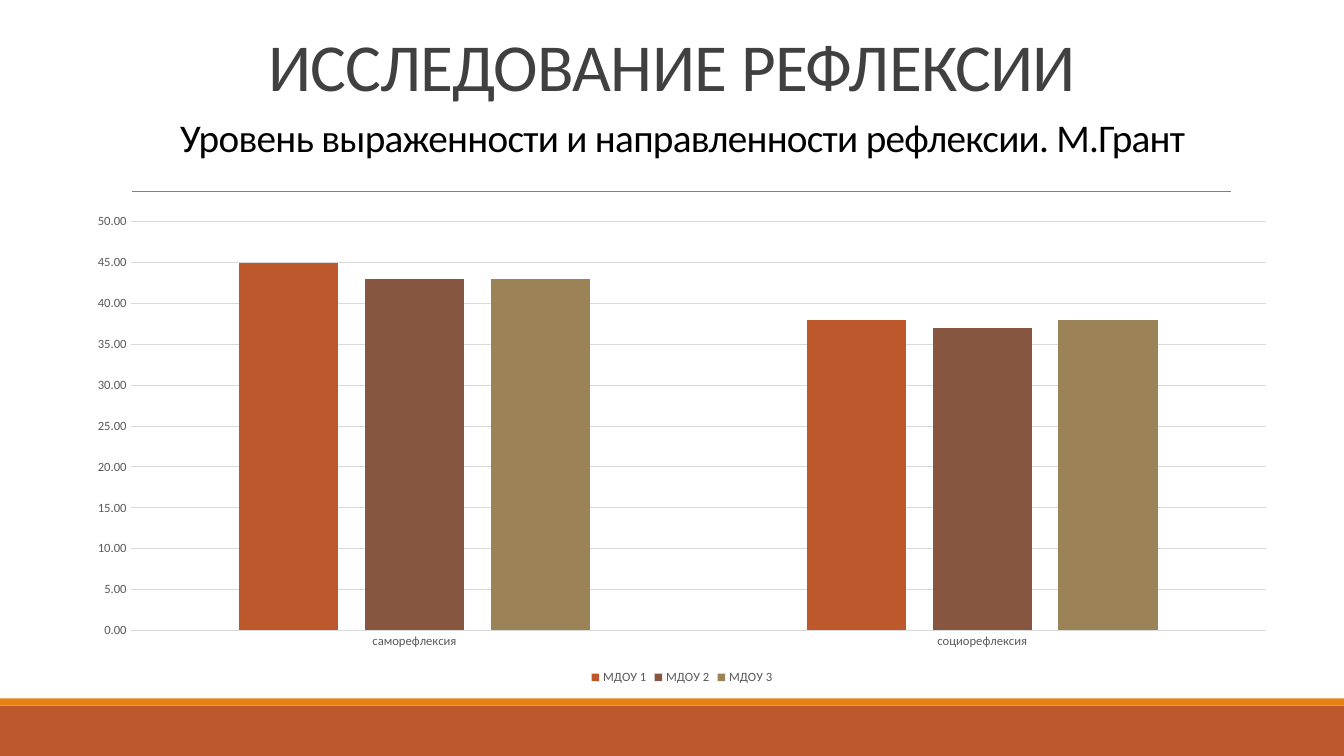
from dataclasses import dataclass

from pptx import Presentation
from pptx.chart.data import CategoryChartData
from pptx.dml.color import RGBColor
from pptx.enum.chart import XL_CHART_TYPE, XL_LEGEND_POSITION, XL_TICK_MARK
from pptx.enum.shapes import MSO_CONNECTOR, MSO_SHAPE
from pptx.enum.text import MSO_ANCHOR, MSO_AUTO_SIZE, PP_ALIGN
from pptx.oxml.ns import qn
from pptx.util import Emu, Pt

COLUMNS = XL_CHART_TYPE.COLUMN_CLUSTERED
LEGEND_BOTTOM = XL_LEGEND_POSITION.BOTTOM
NO_TICK = XL_TICK_MARK.NONE
STRAIGHT = MSO_CONNECTOR.STRAIGHT
RECTANGLE = MSO_SHAPE.RECTANGLE
BOTTOM = MSO_ANCHOR.BOTTOM
NO_AUTOFIT = MSO_AUTO_SIZE.NONE
CENTER = PP_ALIGN.CENTER

EMU_PER_PX = 9525
SLIDE_WIDTH, SLIDE_HEIGHT = 1280, 720


@dataclass(frozen=True)
class Theme:
    font: str = "Calibri"
    heading_size: int = 48
    subtitle_size: int = 28
    chart_size: int = 10
    label_size: int = 9
    heading: str = "404040"
    ink: str = "000000"
    label: str = "595959"
    grid: str = "D9D9D9"
    rule: str = "808080"
    rust: str = "BD582C"
    orange: str = "E48312"
    brown: str = "865640"
    olive: str = "9B8357"


@dataclass(frozen=True)
class Area:
    left: int
    top: int
    width: int
    height: int

    def emu(self) -> tuple[Emu, ...]:
        return tuple(px(n) for n in (self.left, self.top, self.width, self.height))


@dataclass(frozen=True)
class Band:
    area: Area
    color: str


@dataclass(frozen=True)
class Heading:
    text: str
    area: Area
    size: int
    color: str


@dataclass(frozen=True)
class Series:
    name: str
    values: tuple[int, ...]
    color: str


THEME = Theme()
BANDS = (
    Band(Area(0, 672, SLIDE_WIDTH, 48), THEME.rust),
    Band(Area(0, 665, SLIDE_WIDTH, 7), THEME.orange),
)
SUBTITLE = Heading("Уровень выраженности и направленности рефлексии. М.Грант",
                   Area(122, 104, 1056, 54), THEME.subtitle_size, THEME.ink)
MAIN_HEADING = Heading("ИССЛЕДОВАНИЕ РЕФЛЕКСИИ",
                       Area(112, 9, 1056, 96), THEME.heading_size, THEME.heading)
CHART_AREA = Area(70, 195, 1159, 461)
CATEGORIES = ("саморефлексия", "социорефлексия")
SERIES = (
    Series("МДОУ 1", (45, 38), THEME.rust),
    Series("МДОУ 2", (43, 37), THEME.brown),
    Series("МДОУ 3", (43, 38), THEME.olive),
)


def px(length: int) -> Emu:
    return Emu(length * EMU_PER_PX)


def rgb(color: str) -> RGBColor:
    return RGBColor.from_string(color)


def style_font(font, size: int, color: str) -> None:
    font.name = THEME.font
    font.size = Pt(size)
    font.bold = False
    font.color.rgb = rgb(color)


def style_line(line, color: str, width: float) -> None:
    line.color.rgb = rgb(color)
    line.width = Pt(width)


def add_band(page, band: Band) -> None:
    shape = page.shapes.add_shape(RECTANGLE, *band.area.emu())
    shape.shadow.inherit = False
    shape.fill.solid()
    shape.fill.fore_color.rgb = rgb(band.color)
    shape.line.fill.background()


def add_rule(page, left: int, right: int, top: int) -> None:
    rule = page.shapes.add_connector(STRAIGHT, px(left), px(top), px(right), px(top))
    style_line(rule.line, THEME.rule, 0.5)
    properties = rule._element.spPr
    properties.append(properties.makeelement(qn("a:effectLst"), {}))


def fill_heading(box, heading: Heading) -> None:
    box.left, box.top, box.width, box.height = heading.area.emu()
    frame = box.text_frame
    frame.text = heading.text
    frame.word_wrap = True
    frame.auto_size = NO_AUTOFIT
    frame.vertical_anchor = BOTTOM
    para = frame.paragraphs[0]
    para.alignment = CENTER
    para.line_spacing = 0.85
    span = para.runs[0]
    style_font(span.font, heading.size, heading.color)
    span.font._element.set("spc", "-50")


def add_reflection_chart(page) -> None:
    data = CategoryChartData(number_format="0.00")
    data.categories = CATEGORIES
    for series in SERIES:
        data.add_series(series.name, series.values)
    chart = page.shapes.add_chart(COLUMNS, *CHART_AREA.emu(), data).chart
    chart.has_title = False
    style_font(chart.font, THEME.chart_size, THEME.ink)

    # Columns
    plot = chart.plots[0]
    plot.gap_width = 219
    plot.overlap = -27
    plot.vary_by_categories = False
    for column, series in zip(plot.series, SERIES):
        column.format.fill.solid()
        column.format.fill.fore_color.rgb = rgb(series.color)

    # Axes
    for axis in (chart.category_axis, chart.value_axis):
        axis.major_tick_mark = axis.minor_tick_mark = NO_TICK
        style_font(axis.tick_labels.font, THEME.label_size, THEME.label)
    style_line(chart.category_axis.format.line, THEME.grid, 0.75)
    values = chart.value_axis
    values.minimum_scale, values.maximum_scale, values.major_unit = 0, 50, 5
    values.format.line.fill.background()
    style_line(values.major_gridlines.format.line, THEME.grid, 0.75)
    values.tick_labels.number_format = "0.00"
    values.tick_labels.number_format_is_linked = False

    # Legend
    chart.has_legend = True
    chart.legend.position = LEGEND_BOTTOM
    chart.legend.include_in_layout = False
    style_font(chart.legend.font, THEME.label_size, THEME.label)


def main() -> None:
    deck = Presentation()
    deck.slide_width, deck.slide_height = px(SLIDE_WIDTH), px(SLIDE_HEIGHT)
    page = deck.slides.add_slide(deck.slide_layouts.get_by_name("Title Only"))

    # Footer bands and the rule under the headings
    for band in BANDS:
        add_band(page, band)
    add_rule(page, 126, 1172, 182)

    # Headings and chart
    fill_heading(page.shapes.title, SUBTITLE)
    add_reflection_chart(page)
    fill_heading(page.shapes.add_textbox(*MAIN_HEADING.area.emu()), MAIN_HEADING)
    deck.save("out.pptx")


if __name__ == "__main__":
    main()
